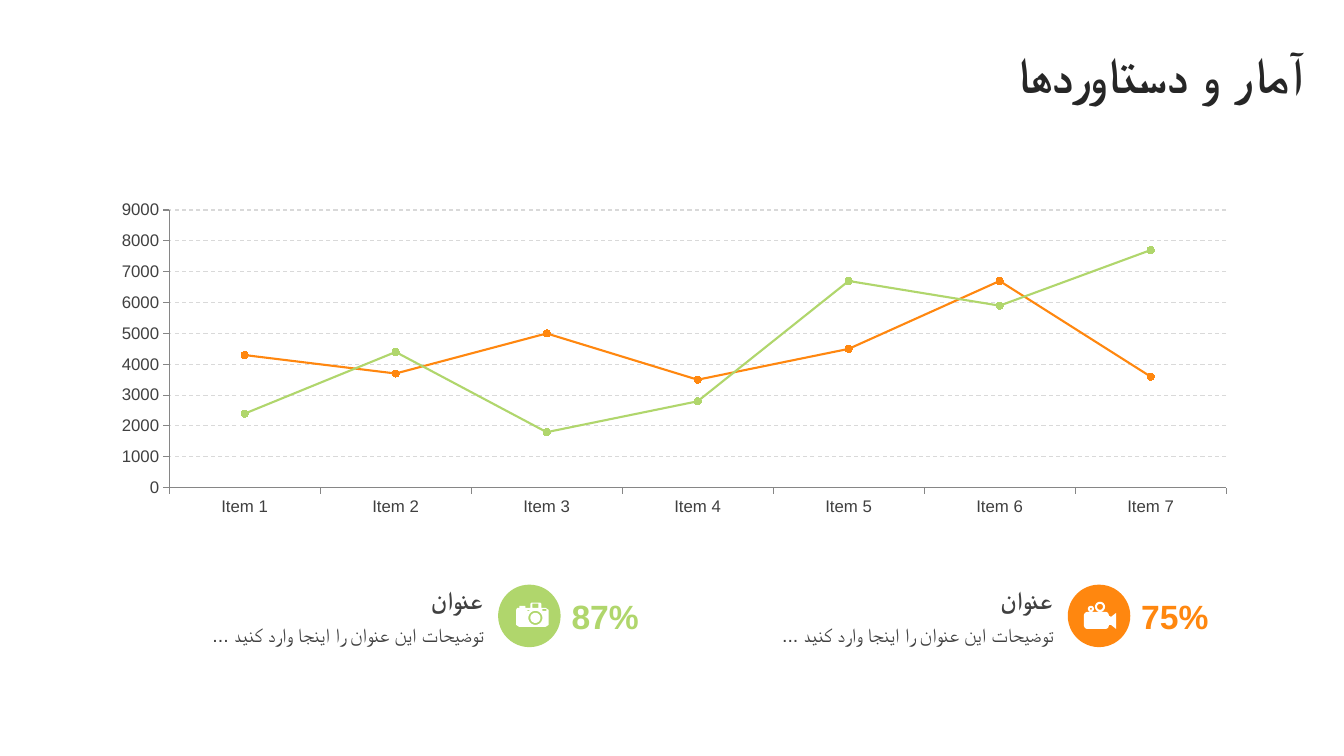
"""Build the statistics slide: a two-series line chart above two captioned figures."""
from dataclasses import dataclass
from math import cos, pi, sin

from lxml import etree
from pptx import Presentation
from pptx.chart.data import CategoryChartData
from pptx.dml.color import RGBColor
from pptx.enum.chart import XL_CHART_TYPE, XL_MARKER_STYLE, XL_TICK_MARK
from pptx.enum.dml import MSO_LINE
from pptx.enum.shapes import MSO_SHAPE
from pptx.enum.text import MSO_ANCHOR, MSO_AUTO_SIZE, PP_ALIGN
from pptx.oxml.ns import qn
from pptx.util import Inches, Pt

LINE_MARKERS = XL_CHART_TYPE.LINE_MARKERS
CIRCLE = XL_MARKER_STYLE.CIRCLE
TICK_OUT = XL_TICK_MARK.OUTSIDE
DASH = MSO_LINE.DASH
OVAL = MSO_SHAPE.OVAL
TOP, MIDDLE = MSO_ANCHOR.TOP, MSO_ANCHOR.MIDDLE
LEFT, RIGHT = PP_ALIGN.LEFT, PP_ALIGN.RIGHT
FIT_SHAPE = MSO_AUTO_SIZE.SHAPE_TO_FIT_TEXT


@dataclass(frozen=True)
class Theme:
    font: str = "Arial"
    title: RGBColor = RGBColor(0x26, 0x26, 0x26)
    text: RGBColor = RGBColor(0x40, 0x40, 0x40)
    orange: RGBColor = RGBColor(0xFF, 0x87, 0x0F)
    green: RGBColor = RGBColor(0xB0, 0xD6, 0x6C)
    white: RGBColor = RGBColor(0xFF, 0xFF, 0xFF)
    grid: RGBColor = RGBColor(0xD9, 0xD9, 0xD9)
    axis: RGBColor = RGBColor(0x86, 0x86, 0x86)
    title_size: Pt = Pt(36)
    figure_size: Pt = Pt(24)
    heading_size: Pt = Pt(18)
    body_size: Pt = Pt(14)
    axis_size: Pt = Pt(12)


theme = Theme()


def add_text(box, text, size, color, bold=True, rtl=True, anchor=MIDDLE):
    """Add a one-line text box and return its paragraph."""
    tf = slide.shapes.add_textbox(*map(Inches, box)).text_frame
    tf.word_wrap = rtl
    tf.auto_size = FIT_SHAPE
    tf.vertical_anchor = anchor
    p = tf.paragraphs[0]
    p.text = text
    p.alignment = RIGHT if rtl else LEFT
    font = p.runs[0].font
    font.name, font.size, font.bold = theme.font, size, bold
    font.color.rgb = color
    if rtl:
        p._p.get_or_add_pPr().set("rtl", "1")
        rPr = p.runs[0]._r.get_or_add_rPr()
        etree.SubElement(rPr, qn("a:cs")).set("typeface", theme.font)
    return p


def ring(x, y, radius, steps=24):
    """Return the points of a circle."""
    angles = [2 * pi * i / steps for i in range(steps)]
    return [(x + radius * cos(a), y + radius * sin(a)) for a in angles]


prs = Presentation()
prs.slide_width, prs.slide_height = Inches(13.33), Inches(7.5)
slide = prs.slides.add_slide(prs.slide_layouts[6])

p = add_text((0.35, 0.37, 12.66, 0.79), "آمار و دستاوردها", theme.title_size, theme.title)
p.line_spacing = 0.9
p.space_before = Pt(10)

data = CategoryChartData()
data.categories = [f"Item {i}" for i in range(1, 8)]
data.add_series("Series 1", (4300, 3700, 5000, 3500, 4500, 6700, 3600))
data.add_series("Series 2", (2400, 4400, 1800, 2800, 6700, 5900, 7700))
chart_box = map(Inches, (0.98, 1.93, 11.41, 3.25))
chart = slide.shapes.add_chart(LINE_MARKERS, *chart_box, data).chart
chart.has_legend = False
chart.has_title = False
chart.font.name = theme.font
chart.font.size = theme.axis_size
chart.font.color.rgb = theme.text
chart.plots[0].vary_by_categories = False

for axis in (chart.category_axis, chart.value_axis):
    axis.major_tick_mark = TICK_OUT
    axis.format.line.color.rgb = theme.axis
    axis.format.line.width = Pt(0.75)
chart.value_axis.minimum_scale = 0
chart.value_axis.maximum_scale = 9000
chart.value_axis.major_unit = 1000
grid = chart.value_axis.major_gridlines.format.line
grid.color.rgb, grid.width, grid.dash_style = theme.grid, Pt(0.75), DASH

for series, color in zip(chart.plots[0].series, (theme.orange, theme.green)):
    series.smooth = False
    series.format.line.color.rgb = color
    series.format.line.width = Pt(1.5)
    series.marker.style = CIRCLE
    series.marker.size = 5
    series.marker.format.fill.solid()
    series.marker.format.fill.fore_color.rgb = color
    series.marker.format.line.color.rgb = color

photo_camera = [
    [(5.12, 6.05), (5.13, 6.03), (5.15, 6.03), (5.15, 6.01), (5.21, 6.01), (5.21, 6.03),
     (5.26, 6.03), (5.26, 5.99), (5.27, 5.98), (5.36, 5.98), (5.37, 5.99), (5.37, 6.03),
     (5.41, 6.03), (5.44, 6.05), (5.44, 6.2), (5.41, 6.22), (5.15, 6.22), (5.12, 6.2)],
    [(5.28, 5.99), (5.34, 5.99), (5.34, 6.03), (5.28, 6.03)],
    [(5.23, 6.05), (5.25, 6.05), (5.25, 6.06), (5.23, 6.06)],
    [(5.38, 6.04), (5.42, 6.04), (5.42, 6.06), (5.38, 6.06)],
    ring(5.31, 6.13, 0.07),
    ring(5.31, 6.13, 0.05),
]
film_camera = [
    [(10.75, 6.1), (10.76, 6.08), (10.78, 6.07), (10.97, 6.07), (10.99, 6.08), (11, 6.11),
     (11.02, 6.12), (11.07, 6.08), (11.07, 6.24), (11.02, 6.2), (11, 6.2), (10.99, 6.23),
     (10.97, 6.24), (10.78, 6.24), (10.76, 6.23), (10.75, 6.21)],
    ring(10.91, 6.02, 0.05),
    ring(10.91, 6.02, 0.03),
    ring(10.82, 6.04, 0.03),
    ring(10.82, 6.04, 0.01),
]

cards = [("87%", theme.green, photo_camera), ("75%", theme.orange, film_camera)]
for i, (figure, color, icon) in enumerate(cards):
    x = 0.57 + 5.65 * i
    add_text((x, 5.75, 4.32, 0.4), "عنوان", theme.heading_size, theme.text)
    add_text((x + 0.01, 6.13, 4.32, 0.34), "توضیحات این عنوان را اینجا وارد کنید ...",
             theme.body_size, theme.text, bold=False, anchor=TOP)
    add_text((x + 5, 5.86, 0.88, 0.5), figure, theme.figure_size, color, rtl=False)
    badge_box = map(Inches, (x + 4.37, 5.8, 0.62, 0.62))
    badge = slide.shapes.add_shape(OVAL, *badge_box)

    outlines = [[(Inches(a), Inches(b)) for a, b in outline] for outline in icon]
    builder = slide.shapes.build_freeform(*outlines[0][0])
    builder.add_line_segments(outlines[0][1:], close=True)
    for outline in outlines[1:]:
        builder.move_to(*outline[0])
        builder.add_line_segments(outline[1:], close=True)
    glyph = builder.convert_to_shape()

    for sp, fill in ((badge, color), (glyph, theme.white)):
        sp.shadow.inherit = False
        sp.fill.solid()
        sp.fill.fore_color.rgb = fill
        sp.line.fill.background()

prs.save("out.pptx")
